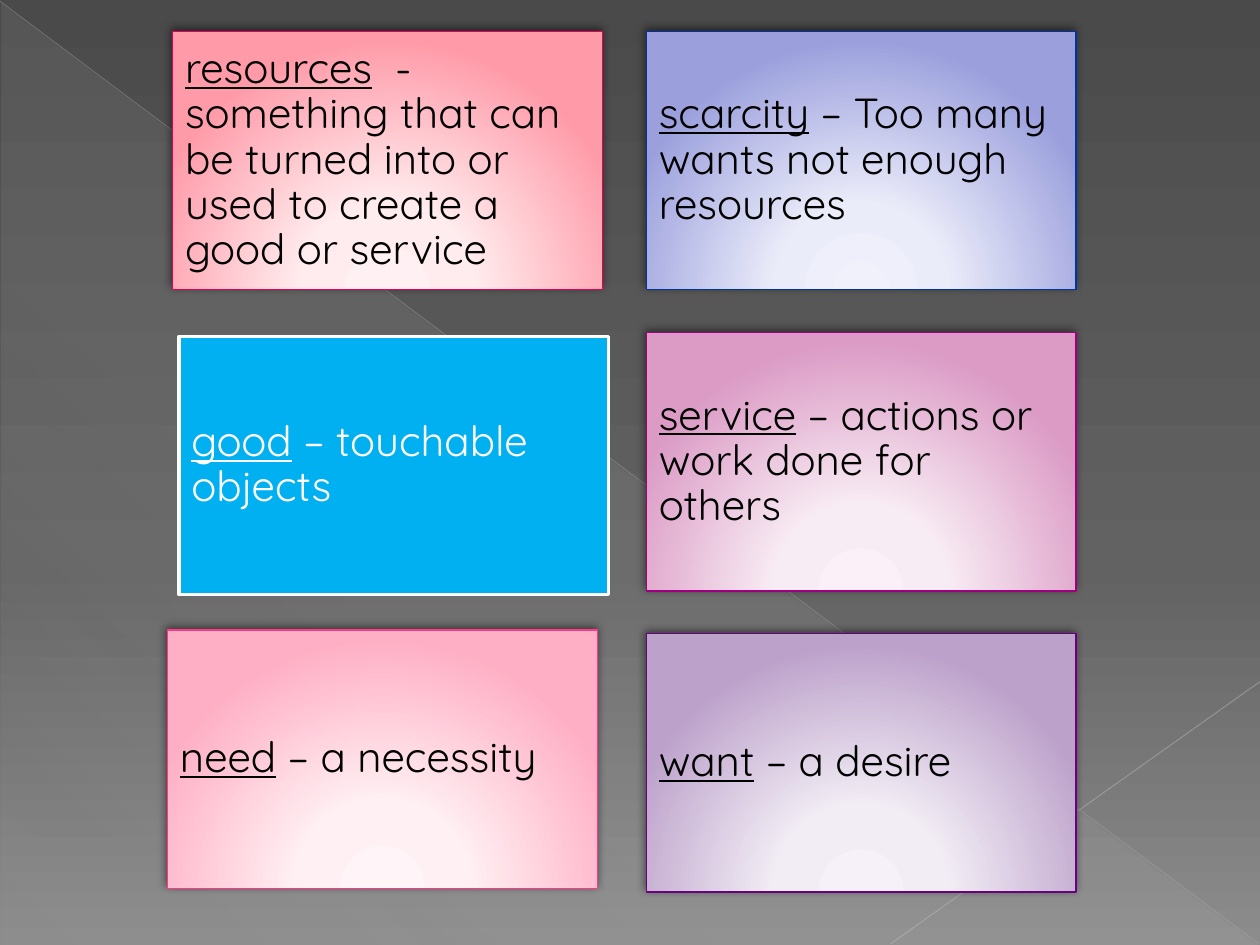
from pptx import Presentation
from pptx.dml.color import RGBColor
from pptx.enum.shapes import MSO_CONNECTOR as Connector, MSO_SHAPE as Shape
from pptx.enum.text import MSO_ANCHOR as Anchor, PP_ALIGN as Align
from pptx.oxml import parse_xml
from pptx.oxml.ns import nsdecls, qn
from pptx.util import Pt

PX = 9144
LINEAR = '<a:lin ang="{}" scaled="0"/>'
GLOW = ('<a:path path="circle"><a:fillToRect l="50000" t="155000" '
        'r="50000" b="-55000"/></a:path>')


def color(value):
    return RGBColor.from_string(value)


class Style:
    """Holds the look of the cards and the page being filled."""

    font, size, inset = "Quicksand", 24, 10

    def __init__(self, page):
        self.page = page

    def gradient(self, fill, element, stops, direction):
        fill.gradient()
        old = next(element.iter(qn("a:gradFill")))
        marks = "".join(
            f'<a:gs pos="{pos * 1000}"><a:srgbClr val="{value}">'
            f'<a:alpha val="{alpha * 1000}"/></a:srgbClr></a:gs>'
            for pos, value, alpha in stops)
        old.getparent().replace(old, parse_xml(
            f'<a:gradFill {nsdecls("a")} rotWithShape="1">'
            f'<a:gsLst>{marks}</a:gsLst>{direction}</a:gradFill>'))

    def background(self, stops, angle):
        self.gradient(self.page.background.fill, self.page.element, stops,
                      LINEAR.format(angle * 60000))

    def shape(self, kind, left, top, width, height):
        shape = self.page.shapes.add_shape(
            kind, left * PX, top * PX, width * PX, height * PX)
        shape.shadow.inherit = False
        return shape

    def triangle(self, left, top, width, height, stops, angle):
        shape = self.shape(Shape.RIGHT_TRIANGLE, left, top, width, height)
        self.gradient(shape.fill, shape.element, stops,
                      LINEAR.format(angle * 60000))
        shape.line.fill.background()

    def line(self, start, end, value, weight, alpha):
        line = self.page.shapes.add_connector(
            Connector.STRAIGHT, *(place * PX for place in start + end))
        line.line.color.rgb = color(value)
        line.line.width = Pt(weight)
        tint = next(line.element.iter(qn("a:srgbClr")))
        tint.append(parse_xml(
            f'<a:alpha {nsdecls("a")} val="{alpha * 1000}"/>'))
        line.element.spPr.append(parse_xml(f'<a:effectLst {nsdecls("a")}/>'))

    def shadow(self, shape):
        effects = next(shape.element.iter(qn("a:effectLst")))
        effects.append(parse_xml(
            f'<a:outerShdw {nsdecls("a")} blurRad="{Pt(5)}" dist="{Pt(2)}" '
            f'dir="{245 * 60000}" algn="ctr" rotWithShape="0">'
            '<a:srgbClr val="000000"><a:alpha val="50000"/></a:srgbClr>'
            '</a:outerShdw>'))

    def card(self, left, top, term, meaning, fills, edge):
        box = self.shape(Shape.RECTANGLE, left, top, 341, 205)
        glowing = len(fills) > 1
        if glowing:
            stops = [(pos, value, 100)
                     for pos, value in zip((0, 34, 100), fills)]
            self.gradient(box.fill, box.element, stops, GLOW)
            self.shadow(box)
        else:
            box.fill.solid()
            box.fill.fore_color.rgb = color(fills[0])
        box.line.color.rgb = color(edge)
        box.line.width = Pt(0.75 if glowing else 2)
        self.text(box, term, meaning, "000000" if glowing else "FFFFFF")

    def text(self, box, term, meaning, ink):
        frame = box.text_frame
        frame.word_wrap = True
        frame.vertical_anchor = Anchor.MIDDLE
        frame.margin_left = frame.margin_right = self.inset * PX
        frame.margin_top = frame.margin_bottom = self.inset * PX
        para = frame.paragraphs[0]
        para.alignment = Align.LEFT
        para.line_spacing = 0.9
        for words, underlined in ((term, True), (meaning, False)):
            span = para.add_run()
            span.text = words
            span.font.name = self.font
            span.font.size = Pt(self.size)
            span.font.underline = underlined
            span.font.color.rgb = color(ink)


CARDS = [
    (137, 25, "resources",
     "  - something that can be turned into or used to create a good or service",
     ("FFF1F3", "FFECEE", "FF9BA9"), "E40059"),
    (513, 25, "scarcity", " – Too many wants not enough resources",
     ("F0F1FB", "EBECF9", "9BA0DD"), "00349E"),
    (142, 267, "good", " – touchable objects", ("00B0F0",), "FFFFFF"),
    (513, 264, "service", " – actions or work done for others",
     ("FBF0F7", "F8ECF4", "DB9BC5"), "9C007F"),
    (133, 500, "need", " – a necessity",
     ("FFF4F7", "FFF0F3", "FFAFC5"), "FF388C"),
    (513, 503, "want", " – a desire",
     ("F6F1F8", "F2EDF5", "BCA1CA"), "68007F"),
]


def main():
    deck = Presentation()
    deck.slide_width, deck.slide_height = 1000 * PX, 750 * PX
    style = Style(deck.slides.add_slide(deck.slide_layouts[6]))
    style.background([(0, "4A4A4A", 100), (60, "626262", 100),
                      (100, "8C8C8C", 100)], 90)
    style.triangle(1, 2, 998, 748, [(0, "D2D2D2", 10), (70, "D2D2D2", 8),
                                    (100, "D2D2D2", 1)], 133)
    style.line((0, 1), (999, 749), "BFBFBF", 0.39, 35)
    style.line((1000, 541), (707, 749), "C6C6C6", 0.47, 45)
    for card in CARDS:
        style.card(*card)
    deck.save("out.pptx")


if __name__ == "__main__":
    main()
